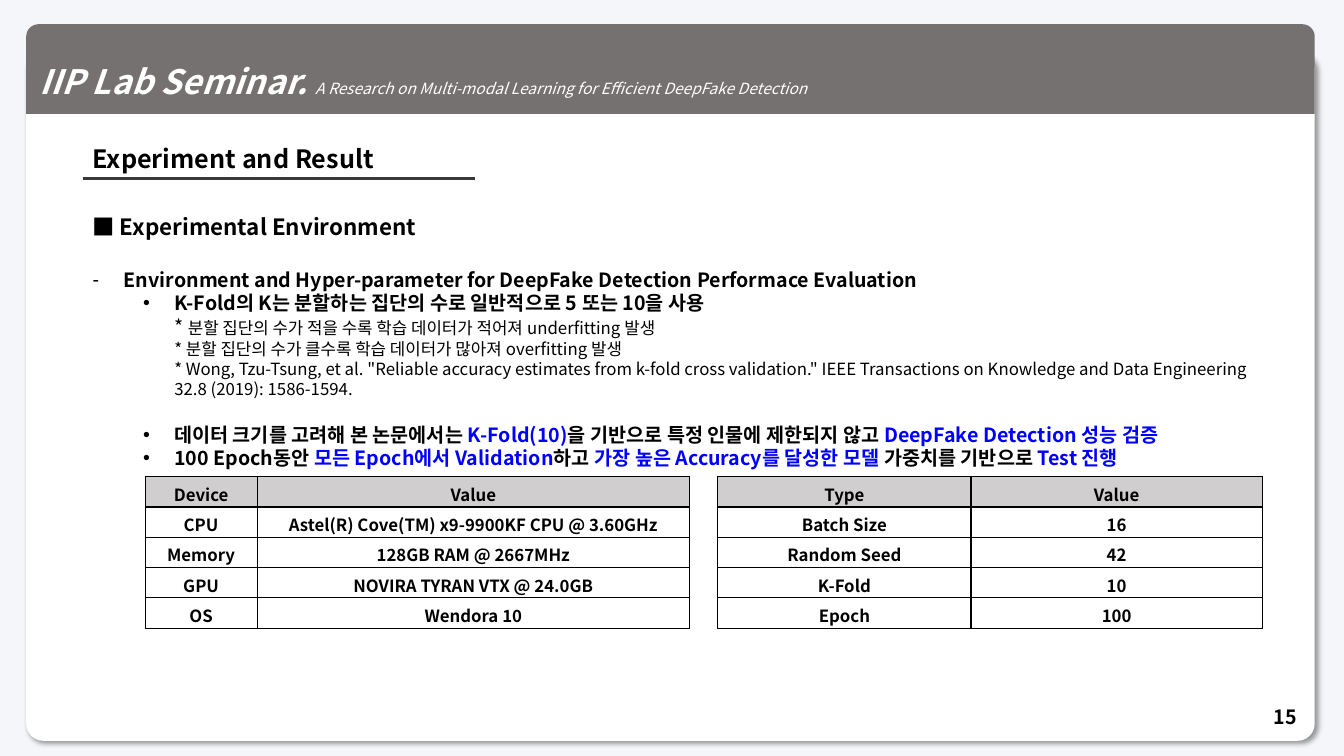
"""Build the seminar slide on the experimental environment."""
from dataclasses import dataclass
from typing import Any

from lxml.etree import SubElement as Sub
from pptx import Presentation
from pptx.dml.color import RGBColor
from pptx.enum.shapes import MSO_CONNECTOR as Link, MSO_SHAPE as Form
from pptx.enum.text import MSO_ANCHOR as Anchor, PP_ALIGN as Align
from pptx.oxml import parse_xml as to_xml
from pptx.oxml.ns import nsdecls, qn
from pptx.util import Inches, Pt

FONT = "Noto Sans CJK KR"
BLACK, WHITE, BLUE = "000000", "FFFFFF", "0000FF"
GRAY, HEAD, RULE, BACK = "767171", "D0CECE", "3B3838", "F5F6F9"
COLS, ROWS = 133.3, 75
LEFT, WIDE = 8.2, 116.9
TOP, HIGH, SPAN = 47.3, 3, 54


@dataclass(frozen=True)
class Run:
    text: str
    size: float = 14
    color: str = BLACK
    bold: bool = True
    slant: bool = False


@dataclass(frozen=True)
class Para:
    runs: tuple[Run, ...]
    mark: str = ""
    indent: float = 0
    before: float = 0


@dataclass(frozen=True)
class Grid:
    left: float
    first: float
    rows: tuple[tuple[str, str], ...]


BODY = (
    Para((Run("■ Experimental Environment", 16),)),
    Para((Run("Environment and Hyper-parameter for DeepFake Detection Performace Evaluation"),),
         "-", 3.1, 19.5),
    Para((Run("K-Fold의 K는 분할하는 집단의 수로 일반적으로 5 또는 10을 사용\n"),
          Run("* ", bold=False),
          Run("분할 집단의 수가 적을 수록 학습 데이터가 적어져 underfitting 발생\n"
              "* 분할 집단의 수가 클수록 학습 데이터가 많아져 overfitting 발생\n"
              '* Wong, Tzu-Tsung, et al. "Reliable accuracy estimates from k-fold cross validation." '
              "IEEE Transactions on Knowledge and Data Engineering 32.8 (2019): 1586-1594.",
              12, bold=False)), "•", 8.1),
    Para((Run("데이터 크기를 고려해 본 논문에서는 "), Run("K-Fold(10)", color=BLUE),
          Run("을 기반으로 특정 인물에 제한되지 않고 "),
          Run("DeepFake Detection 성능 검증", color=BLUE)), "•", 8.1, 17),
    Para((Run("100 Epoch동안 "), Run("모든 Epoch에서 Validation", color=BLUE),
          Run("하고"), Run(" 가장 높은 Accuracy를 달성한 모델", color=BLUE),
          Run(" 가중치를 기반으로 "), Run("Test 진행", color=BLUE)), "•", 8.1),
)
GRIDS = (
    Grid(71.2, 25.1, (("Type", "Value"), ("Batch Size", "16"), ("Random Seed", "42"),
                      ("K-Fold", "10"), ("Epoch", "100"))),
    Grid(14.4, 11.1, (("Device", "Value"), ("CPU", "Astel(R) Cove(TM) x9-9900KF CPU @ 3.60GHz"),
                      ("Memory", "128GB RAM @ 2667MHz"), ("GPU", "NOVIRA TYRAN VTX @ 24.0GB"),
                      ("OS", "Wendora 10"))),
)


def cell(count: float) -> int:
    """Turn grid steps of a tenth of an inch into a length."""
    return Inches(count / 10)


def rgb(code: str) -> RGBColor:
    """Turn a hex string into a colour."""
    return RGBColor.from_string(code)


def style(font: Any, run: Run) -> None:
    """Format a font as its run asks."""
    font.name, font.size = FONT, Pt(run.size)
    font.bold, font.italic = run.bold, run.slant
    font.color.rgb = rgb(run.color)


def write(frame: Any, *paras: Para, align: Any = Align.LEFT, anchor: Any = Anchor.TOP,
          lines: float | None = None) -> None:
    """Fill a text frame with formatted paragraphs."""
    frame.word_wrap, frame.vertical_anchor = True, anchor
    for at, para in enumerate(paras):
        item = frame.add_paragraph() if at else frame.paragraphs[0]
        item.alignment, item.space_before = align, Pt(para.before)
        if lines:
            item.line_spacing = lines
        if para.mark:
            prop = item._p.get_or_add_pPr()
            prop.set("marL", str(cell(para.indent)))
            prop.set("indent", str(-cell(3.1)))
            Sub(prop, qn("a:buFont"), typeface="Arial")
            Sub(prop, qn("a:buChar"), char=para.mark)
        for run in para.runs:
            for turn, text in enumerate(run.text.split("\n")):
                if turn:
                    item.add_line_break()
                if text:
                    part = item.add_run()
                    part.text = text
                    style(part.font, run)
                    Sub(part._r.get_or_add_rPr(), qn("a:ea"), typeface=FONT)


def panel(slide: Any, form: Any, box: tuple[float, ...], fill: str, *bends: float) -> Any:
    """Draw a filled shape without an outline."""
    shape = slide.shapes.add_shape(form, *map(cell, box))
    shape.shadow.inherit = False
    shape.fill.solid()
    shape.fill.fore_color.rgb = rgb(fill)
    shape.line.fill.background()
    for at, bend in enumerate(bends):
        shape.adjustments[at] = bend
    return shape


def shade(shape: Any) -> None:
    """Give a shape a soft shadow to the lower right."""
    cast = Sub(shape._element.spPr.find(qn("a:effectLst")), qn("a:outerShdw"),
               blurRad=str(Pt(4)), dist=str(Pt(3)), dir="2700000", algn="tl", rotWithShape="0")
    tint = Sub(cast, qn("a:srgbClr"), val=BLACK)
    Sub(tint, qn("a:alpha"), val="40000")


def label(slide: Any, box: tuple[float, ...], *paras: Para, **form: Any) -> None:
    """Place a text box."""
    write(slide.shapes.add_textbox(*map(cell, box)).text_frame, *paras, **form)


def rule(slide: Any, left: float, top: float, right: float) -> None:
    """Draw the line under the title."""
    line = slide.shapes.add_connector(Link.STRAIGHT, *map(cell, (left, top, right, top)))
    line.line.color.rgb, line.line.width = rgb(RULE), Pt(2.25)
    Sub(line._element.spPr, qn("a:effectLst"))


def edge(box: Any) -> None:
    """Border a table cell on all sides."""
    prop = box._tc.get_or_add_tcPr()
    for at, side in enumerate("LRTB"):
        prop.insert(at, to_xml(
            f'<a:ln{side} {nsdecls("a")} w="{Pt(1)}"><a:solidFill>'
            f'<a:srgbClr val="{BLACK}"/></a:solidFill></a:ln{side}>'))


def table(slide: Any, grid: Grid) -> None:
    """Draw a table of two columns with a shaded header."""
    count = len(grid.rows)
    box = map(cell, (grid.left, TOP, SPAN, HIGH * count))
    body = slide.shapes.add_table(count, 2, *box).table
    body.first_row = body.horz_banding = False
    body.columns[0].width = cell(grid.first)
    body.columns[1].width = cell(SPAN - grid.first)
    for row, texts in enumerate(grid.rows):
        body.rows[row].height = cell(HIGH)
        for col, text in enumerate(texts):
            item = body.cell(row, col)
            if row:
                item.fill.background()
            else:
                item.fill.solid()
                item.fill.fore_color.rgb = rgb(HEAD)
            edge(item)
            write(item.text_frame, Para((Run(text, 12),)), align=Align.CENTER)


def main() -> None:
    """Build and save the slide."""
    deck = Presentation()
    deck.slide_width, deck.slide_height = cell(COLS), cell(ROWS)
    slide = deck.slides.add_slide(deck.slide_layouts[6])
    slide.background.fill.solid()
    slide.background.fill.fore_color.rgb = rgb(BACK)
    shade(panel(slide, Form.ROUNDED_RECTANGLE, (2.6, 5.2, 127.8, 68.3), WHITE, 0.025))
    band = panel(slide, Form.ROUND_2_SAME_RECTANGLE, (2.6, 2.4, 127.8, 8.9), GRAY, 0.137, 0)
    write(band.text_frame, Para((
        Run("IIP Lab Seminar. ", 24, WHITE, slant=True),
        Run("A Research on Multi-modal Learning for Efficient DeepFake Detection",
            11, WHITE, False, True))), anchor=Anchor.MIDDLE, lines=1.5)
    label(slide, (LEFT, 13.7, WIDE, 4), Para((Run("Experiment and Result", 18),)))
    rule(slide, LEFT, 17.7, 47.1)
    label(slide, (99.6, 69.1, 30, 4), Para((Run("15"),)),
          align=Align.RIGHT, anchor=Anchor.MIDDLE)
    label(slide, (LEFT, 20.7, WIDE, 26.6), *BODY)
    for grid in GRIDS:
        table(slide, grid)
    deck.save("out.pptx")


if __name__ == "__main__":
    main()
